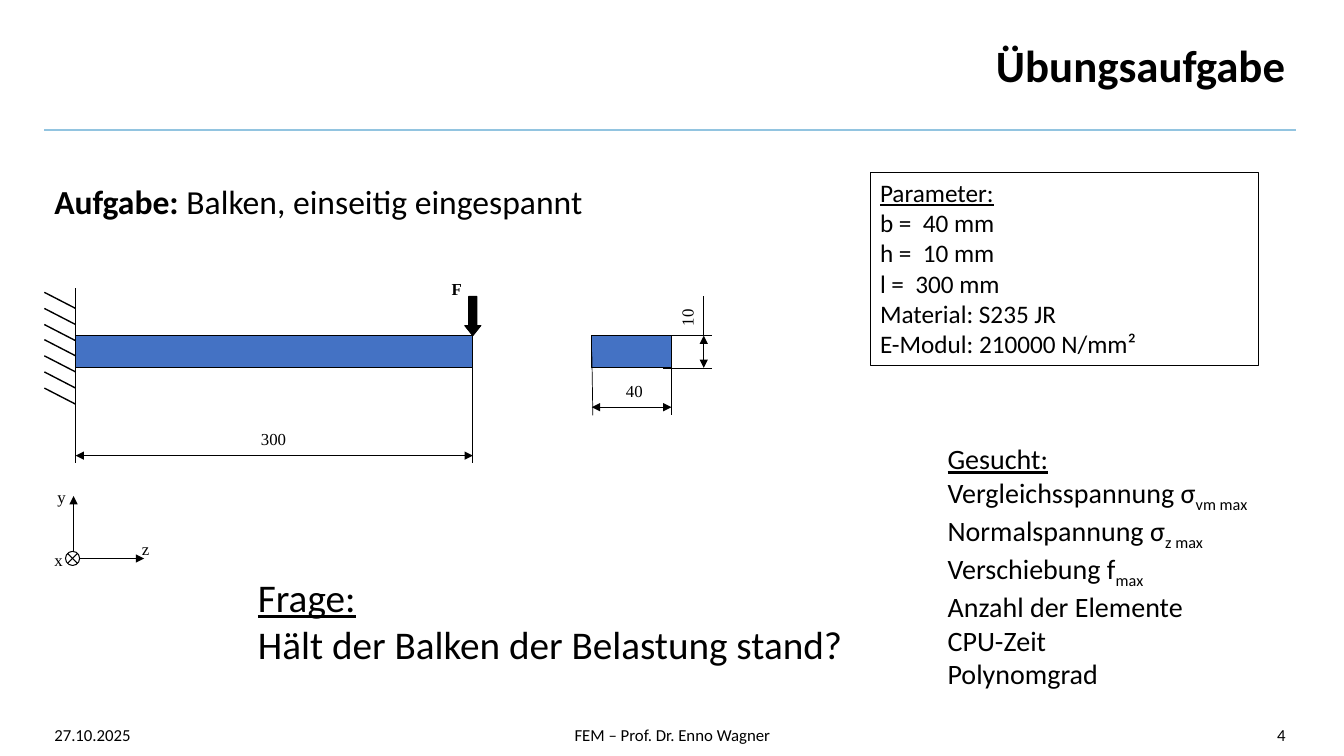
from dataclasses import dataclass

from lxml import etree
from pptx import Presentation
from pptx import util as u
from pptx.dml.color import RGBColor
from pptx.enum import shapes as kinds
from pptx.enum import text as txt
from pptx.oxml.ns import qn

PX = 9144  # EMU per px, 100 px to the inch
LEFT, CENTER, RIGHT = txt.PP_ALIGN.LEFT, txt.PP_ALIGN.CENTER, txt.PP_ALIGN.RIGHT
TOP, MIDDLE = txt.MSO_ANCHOR.TOP, txt.MSO_ANCHOR.MIDDLE


@dataclass(frozen=True)
class Theme:
    ink: str = "000000"
    paper: str = "FFFFFF"
    steel: str = "4472C4"
    rule: str = "92C4E0"
    sans: str = "Calibri"
    serif: str = "Times New Roman"
    title: int = 32
    question: int = 28
    task: int = 24
    wanted: int = 20
    parameter: int = 18
    small: int = 12
    thin: float = 0.5
    normal: float = 0.75
    strong: float = 1


THEME = Theme()


@dataclass(frozen=True)
class Label:
    text: str
    left: int
    top: int
    width: int
    height: int
    size: int = THEME.small
    font: str = THEME.sans
    bold: bool = False
    align: txt.PP_ALIGN = LEFT
    anchor: txt.MSO_ANCHOR = TOP
    rotation: int = 0


@dataclass(frozen=True)
class Line:
    x1: int
    y1: int
    x2: int
    y2: int
    weight: float = THEME.normal
    arrows: bool = False
    color: str = THEME.ink


@dataclass(frozen=True)
class Block:
    kind: kinds.MSO_SHAPE
    left: int
    top: int
    width: int
    height: int
    fill: str = ""


def px(*values: int) -> list[u.Emu]:
    return [u.Emu(value * PX) for value in values]


def style_run(run, label: Label) -> None:
    run.font.name = label.font
    run.font.size = u.Pt(label.size)
    run.font.bold = label.bold
    run.font.color.rgb = RGBColor.from_string(THEME.ink)


def write(box, label: Label):
    frame = box.text_frame
    frame.text = label.text
    frame.word_wrap = True
    frame.auto_size = txt.MSO_AUTO_SIZE.NONE
    frame.vertical_anchor = label.anchor
    for para in frame.paragraphs:
        para.alignment = label.align
        for span in para.runs:
            style_run(span, label)
    return frame


def add_label(parent, label: Label):
    box = parent.add_textbox(*px(label.left, label.top, label.width, label.height))
    box.rotation = label.rotation
    return write(box, label)


def add_span(para, text: str, label: Label):
    span = para.add_run()
    span.text = text
    style_run(span, label)
    return span


def underline_heading(frame) -> None:
    frame.paragraphs[0].runs[0].font.underline = True


def set_stroke(shape, weight: float, color: str = THEME.ink, arrows: bool = False) -> None:
    shape.line.width = u.Pt(weight)
    shape.line.color.rgb = RGBColor.from_string(color)
    if arrows:
        stroke = shape.line._get_or_add_ln()
        for end in ("a:headEnd", "a:tailEnd"):
            etree.SubElement(stroke, qn(end), type="triangle")


def add_line(parent, line: Line):
    connector = parent.add_connector(
        kinds.MSO_CONNECTOR.STRAIGHT, *px(line.x1, line.y1, line.x2, line.y2))
    set_stroke(connector, line.weight, line.color, line.arrows)
    etree.SubElement(connector._element.spPr, qn("a:effectLst"))
    return connector


def add_block(parent, block: Block):
    shape = parent.add_shape(
        block.kind, *px(block.left, block.top, block.width, block.height))
    shape.shadow.inherit = False
    if block.fill:
        shape.fill.solid()
        shape.fill.fore_color.rgb = RGBColor.from_string(block.fill)
    else:
        shape.fill.background()
    set_stroke(shape, THEME.normal)
    return shape


def draw_beam(parent) -> None:
    # Wall with hatching, extension and dimension lines
    hatching = [Line(44, 290 + round(15.8 * i), 75, 306 + round(15.8 * i), THEME.strong)
                for i in range(7)]
    for line in hatching + [
        Line(75, 286, 75, 459, THEME.strong),
        Line(469, 365, 469, 459),
        Line(75, 452, 469, 452, arrows=True),
        Line(666, 357, 666, 412, THEME.thin),
        Line(658, 333, 706, 333, THEME.thin),
        Line(658, 365, 706, 365, THEME.thin),
        Line(698, 333, 698, 294, THEME.thin),
        Line(587, 404, 666, 404, arrows=True),
        Line(698, 333, 698, 365, arrows=True),
    ]:
        add_line(parent, line)

    # Beam, cross-section and force
    add_block(parent, Block(kinds.MSO_SHAPE.RECTANGLE, 75, 333, 394, 32, THEME.steel))
    section = add_block(
        parent, Block(kinds.MSO_SHAPE.RECTANGLE, 587, 333, 79, 32, THEME.steel))
    add_line(parent, Line(587, 349, 588, 412, THEME.thin)).begin_connect(section, 1)
    force = add_block(parent, Block(kinds.MSO_SHAPE.DOWN_ARROW, 461, 294, 16, 39, THEME.ink))
    force.adjustments[0], force.adjustments[1] = 0.5, 0.63

    for label in (
        Label("F", 438, 272, 39, 30, font=THEME.serif, bold=True),
        Label("300", 249, 420, 63, 30, font=THEME.serif),
        Label("40", 611, 373, 47, 30, font=THEME.serif),
        Label("10", 650, 287, 63, 30, font=THEME.serif, rotation=270),
    ):
        add_label(parent, label)


def draw_axes(parent) -> None:
    for name, left, top in (("z", 131, 530), ("y", 47, 478), ("x", 44, 540)):
        add_label(parent, Label(name, left, top, 35, 30, font=THEME.serif))
    builder = parent.build_freeform(73, 492, scale=PX)
    builder.add_line_segments([(73, 554), (143, 554)], close=False)
    axes = builder.convert_to_shape()
    axes.shadow.inherit = False
    axes.fill.background()
    set_stroke(axes, THEME.normal, arrows=True)
    add_block(parent, Block(kinds.MSO_SHAPE.OVAL, 65, 547, 14, 14, THEME.paper))
    add_line(parent, Line(67, 549, 77, 559))
    add_line(parent, Line(77, 549, 67, 559))


def main() -> None:
    deck = Presentation()
    deck.slide_width, deck.slide_height = px(1333, 750)
    page = deck.slides.add_slide(deck.slide_layouts[5])

    # Title and rule
    heading = Label("Übungsaufgabe", 318, 16, 967, 102, THEME.title,
                    bold=True, align=RIGHT, anchor=MIDDLE)
    title = page.shapes.title
    title.left, title.top, title.width, title.height = px(
        heading.left, heading.top, heading.width, heading.height)
    write(title, heading).paragraphs[0].line_spacing = 0.9
    add_line(page.shapes, Line(1285, 129, 44, 129, THEME.strong, color=THEME.rule))

    # Task
    task = Label("Aufgabe: ", 44, 179, 662, 52, THEME.task)
    para = add_label(page.shapes, task).paragraphs[0]
    para.line_spacing = 0.9
    para.runs[0].font.bold = True
    add_span(para, "Balken, einseitig eingespannt", task)

    # Drawings
    draw_beam(page.shapes.add_group_shape().shapes)
    draw_axes(page.shapes.add_group_shape().shapes)

    # Parameters
    parameters = Label("Parameter:\nb =  40 mm\nh =  10 mm\nl =  300 mm\n"
                       "Material: S235 JR\nE-Modul: 210000 N/mm²",
                       863, 171, 385, 192, THEME.parameter)
    box = add_block(page.shapes, Block(kinds.MSO_SHAPE.RECTANGLE, 863, 171, 385, 192))
    underline_heading(write(box, parameters))

    # Wanted results
    wanted = Label("Gesucht:\nVergleichsspannung σ\nNormalspannung σ\nVerschiebung f\n"
                   "Anzahl der Elemente\nCPU-Zeit\nPolynomgrad",
                   930, 433, 393, 246, THEME.wanted)
    frame = add_label(page.shapes, wanted)
    underline_heading(frame)
    for para, index in zip(frame.paragraphs[1:], ("vm max", "z max", "max")):
        add_span(para, index, wanted)._r.get_or_add_rPr().set("baseline", "-25000")

    # Question
    underline_heading(add_label(page.shapes, Label(
        "Frage:\nHält der Balken der Belastung stand?", 246, 564, 617, 104, THEME.question)))

    # Footer
    for text, left, width, align in (("27.10.2025", 44, 300, LEFT),
                                     ("FEM – Prof. Dr. Enno Wagner", 442, 450, CENTER),
                                     ("4", 985, 300, RIGHT)):
        add_label(page.shapes, Label(text, left, 709, width, 40, align=align, anchor=MIDDLE))

    deck.save("out.pptx")


if __name__ == "__main__":
    main()
